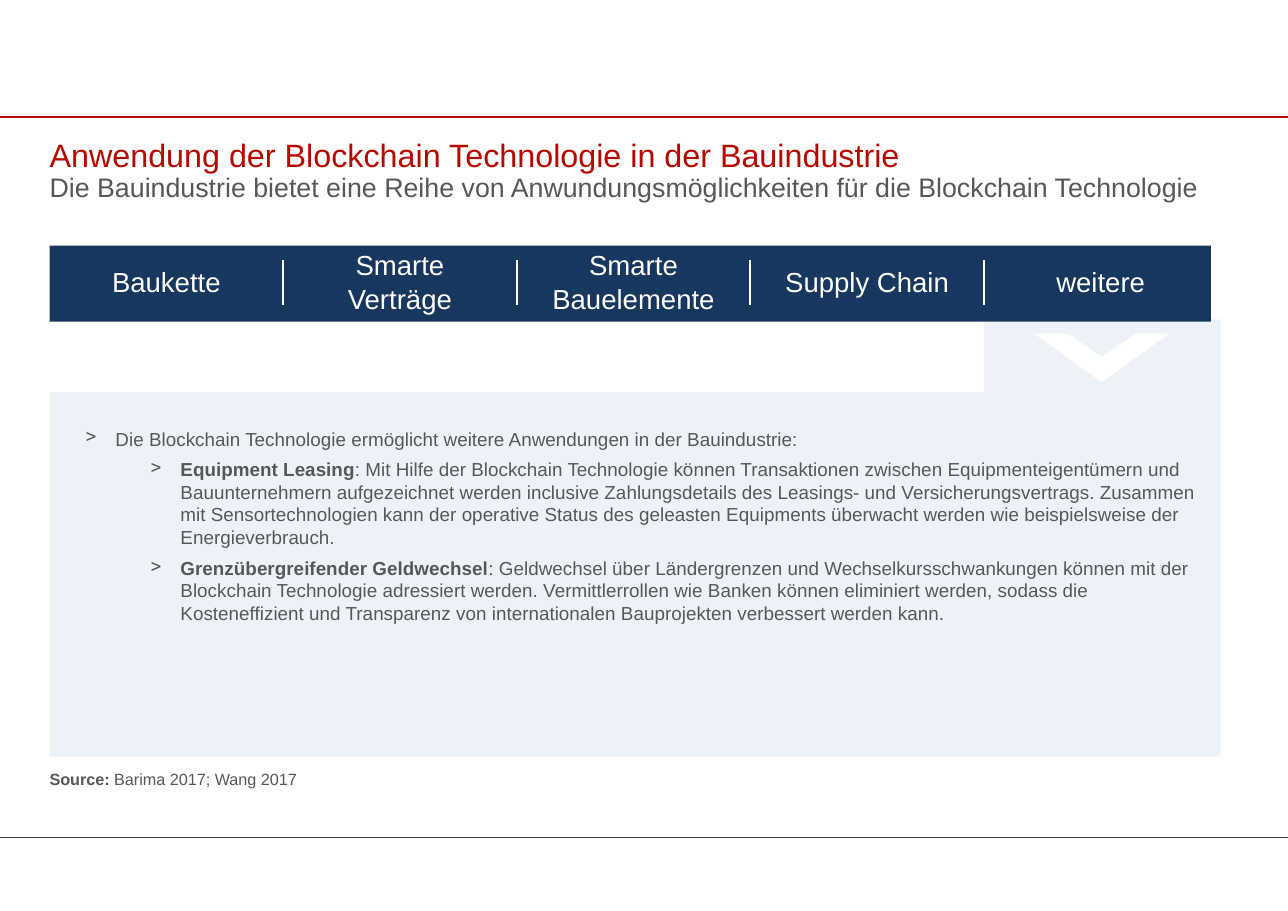
from dataclasses import dataclass
from lxml.etree import SubElement
from pptx import Presentation
from pptx.dml.color import RGBColor
from pptx.enum.shapes import MSO_CONNECTOR, MSO_SHAPE
from pptx.enum.text import MSO_ANCHOR, PP_ALIGN
from pptx.oxml.ns import qn
from pptx.util import Inches, Pt

TITLE = "Anwendung der Blockchain Technologie in der Bauindustrie"
SUBTITLE = "Die Bauindustrie bietet eine Reihe von Anwundungsmöglichkeiten für die Blockchain Technologie"
TOPICS = ["Baukette", "Smarte Verträge", "Smarte Bauelemente", "Supply Chain", "weitere"]
POINTS = [
    (0, "", "Die Blockchain Technologie ermöglicht weitere Anwendungen in der Bauindustrie:"),
    (1, "Equipment Leasing",
     ": Mit Hilfe der Blockchain Technologie können Transaktionen zwischen Equipmenteigentümern und "
     "Bauunternehmern aufgezeichnet werden inclusive Zahlungsdetails des Leasings- und "
     "Versicherungsvertrags. Zusammen mit Sensortechnologien kann der operative Status des geleasten "
     "Equipments überwacht werden wie beispielsweise der Energieverbrauch."),
    (1, "Grenzübergreifender Geldwechsel",
     ": Geldwechsel über Ländergrenzen und Wechselkursschwankungen können mit der Blockchain "
     "Technologie adressiert werden. Vermittlerrollen wie Banken können eliminiert werden, sodass die "
     "Kosteneffizient und Transparenz von internationalen Bauprojekten verbessert werden kann."),
]
SOURCE = ("Source: ", "Barima 2017; Wang 2017")


@dataclass(frozen=True)
class Theme:
    font: str = "Arial"
    red: str = "B50900"
    grey: str = "575757"
    rule: str = "404040"
    navy: str = "17375E"
    pale: str = "EDF2F8"
    white: str = "FFFFFF"
    title: float = 21.1
    subtitle: float = 17.5
    topic: float = 18
    body: float = 12.3
    source: float = 10.6
    gap: float = 5.3


THEME = Theme()
WIDTH, HEIGHT = 11.69, 8.27
LEFT, COLUMN = 0.45, 2.12
HEAD_WIDTH, HEAD_HEIGHT = 10.79, 0.35
BAR_TOP, BAR_HEIGHT = 2.23, 0.69
TOPIC_WIDTH, TOPIC_HEIGHT = 1.67, 0.55
PANEL_TOP, PANEL_WIDTH, PANEL_HEIGHT = 3.56, 10.63, 3.31
INDENTS = (0.27, 0.86)
HANGING = 0.27


def rgb(color):
    return RGBColor.from_string(color)


def write(paragraph, parts, size, color):
    for text, bold in parts:
        if text:
            run = paragraph.add_run()
            run.text = text
            run.font.name, run.font.size, run.font.bold = THEME.font, Pt(size), bold
            run.font.color.rgb = rgb(color)


def prepare(frame, inset=0, anchor=MSO_ANCHOR.TOP):
    frame.word_wrap = True
    frame.vertical_anchor = anchor
    frame.margin_left = frame.margin_right = Inches(2 * inset)
    frame.margin_top = frame.margin_bottom = Inches(inset)
    return frame


def paint(shape, color):
    shape.shadow.inherit = False
    shape.fill.solid()
    shape.fill.fore_color.rgb = rgb(color)
    shape.line.fill.background()
    return shape


def block(slide, box, color):
    return paint(slide.shapes.add_shape(MSO_SHAPE.RECTANGLE, *map(Inches, box)), color)


def text_box(slide, box, inset=0):
    return prepare(slide.shapes.add_textbox(*map(Inches, box)).text_frame, inset)


def rule(slide, ends, color, width):
    line = slide.shapes.add_connector(MSO_CONNECTOR.STRAIGHT, *map(Inches, ends))
    line.line.color.rgb = rgb(color)
    line.line.width = Pt(width)
    SubElement(line._element.spPr, qn("a:effectLst"))


def headings(slide):
    title = slide.shapes.title
    title.left, title.top, title.width, title.height = map(Inches, (LEFT, 1.23, HEAD_WIDTH, HEAD_HEIGHT))
    title_line = prepare(title.text_frame).paragraphs[0]
    title_line.alignment = PP_ALIGN.LEFT
    write(title_line, [(TITLE, False)], THEME.title, THEME.red)
    subtitle = text_box(slide, (LEFT, 1.55, HEAD_WIDTH, HEAD_HEIGHT))
    write(subtitle.paragraphs[0], [(SUBTITLE, False)], THEME.subtitle, THEME.grey)


def details(slide):
    block(slide, (LEFT, PANEL_TOP, PANEL_WIDTH, PANEL_HEIGHT), THEME.pale)
    last_column = LEFT + (len(TOPICS) - 1) * COLUMN
    block(slide, (last_column, 2.9, LEFT + PANEL_WIDTH - last_column, 0.68), THEME.pale)
    center, top, half, notch = last_column + COLUMN / 2 + 0.01, 3.03, 0.61, 0.31
    outline = [(half, 0), (notch, 0), (0, 0.21), (-notch, 0), (-half, 0), (0, 0.44)]
    corners = [(Inches(center + x), Inches(top + y)) for x, y in outline]
    builder = slide.shapes.build_freeform(*corners[0])
    builder.add_line_segments(corners[1:], close=True)
    paint(builder.convert_to_shape(), THEME.white)

    frame = text_box(slide, (0.68, 3.83, 10.3, 2.17), 0.05)
    for index, (level, lead, text) in enumerate(POINTS):
        paragraph = frame.add_paragraph() if index else frame.paragraphs[0]
        paragraph.level = level
        properties = paragraph._p.get_or_add_pPr()
        properties.set("marL", str(Inches(INDENTS[level])))
        properties.set("indent", str(-Inches(HANGING)))
        SubElement(properties, qn("a:buChar"), char=">")
        if index:
            paragraph.space_before = Pt(THEME.gap)
        write(paragraph, [(lead, True), (text, False)], THEME.body, THEME.grey)


def topics(slide):
    block(slide, (LEFT, BAR_TOP, 10.54, BAR_HEIGHT), THEME.navy)
    for index, topic in enumerate(TOPICS):
        column = LEFT + index * COLUMN
        tab = block(slide, (column + (COLUMN - TOPIC_WIDTH) / 2, 2.28, TOPIC_WIDTH, TOPIC_HEIGHT), THEME.navy)
        label = prepare(tab.text_frame, anchor=MSO_ANCHOR.MIDDLE).paragraphs[0]
        label.alignment = PP_ALIGN.CENTER
        write(label, [(topic, False)], THEME.topic, THEME.white)
        if index:
            rule(slide, (column, 2.36, column, 2.77), THEME.white, 1.5)


def main():
    deck = Presentation()
    deck.slide_width, deck.slide_height = Inches(WIDTH), Inches(HEIGHT)
    slide = deck.slides.add_slide(deck.slide_layouts[5])
    rule(slide, (0, 1.06, WIDTH, 1.06), THEME.red, 1.25)
    rule(slide, (0, 7.6, WIDTH, 7.6), THEME.rule, 0.75)
    headings(slide)
    details(slide)
    topics(slide)
    source = text_box(slide, (LEFT, 6.98, 9.1, 0.18))
    write(source.paragraphs[0], zip(SOURCE, (True, False)), THEME.source, THEME.grey)
    deck.save("out.pptx")


if __name__ == "__main__":
    main()
